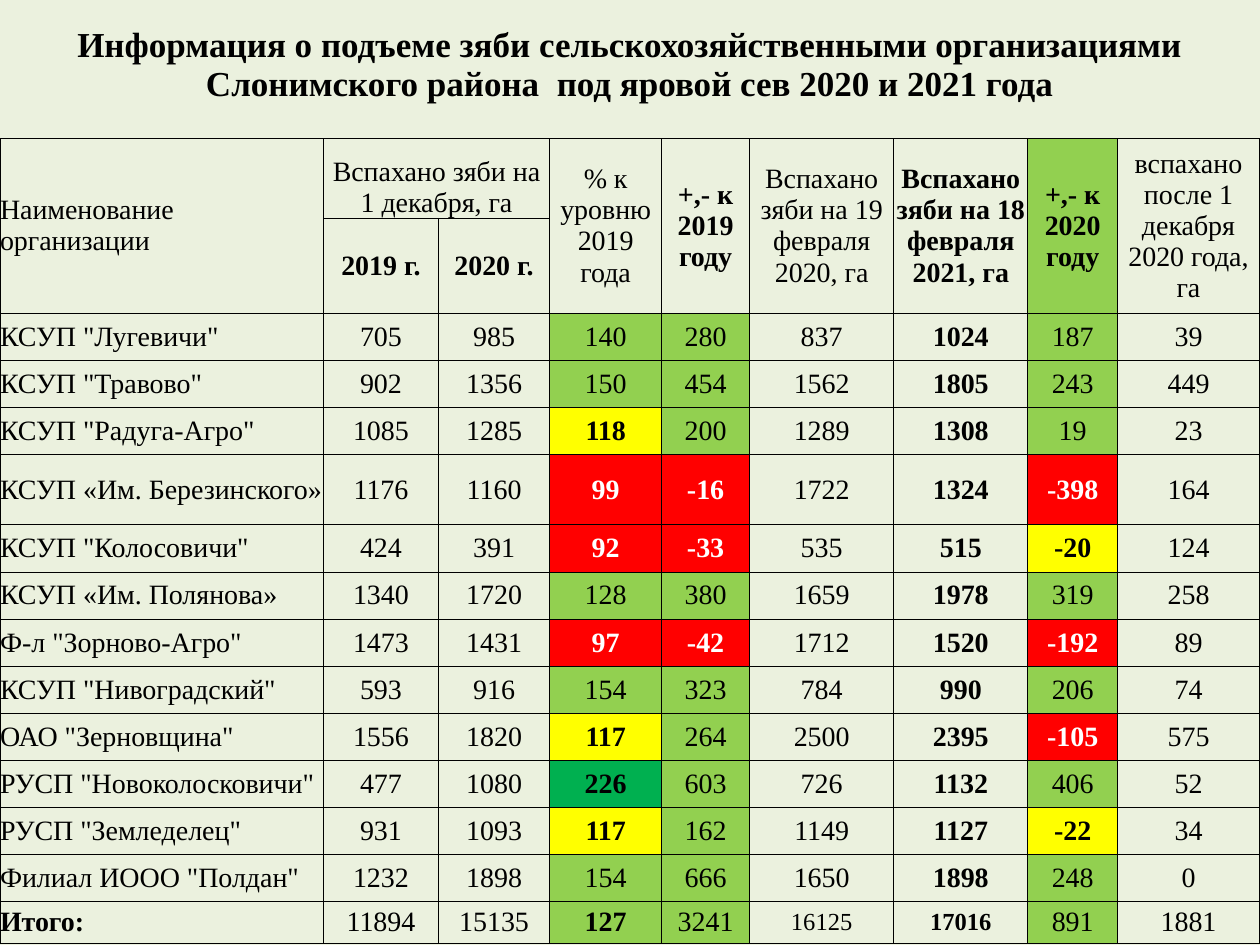
from lxml.etree import SubElement
from pptx import Presentation
from pptx.dml.color import RGBColor
from pptx.enum.text import MSO_ANCHOR as Anchor, PP_ALIGN as Align
from pptx.oxml.ns import qn
from pptx.util import Cm, Pt

PALE = RGBColor(0xEB, 0xF1, 0xDE)
GREEN = RGBColor(0x92, 0xD0, 0x50)
DARK_GREEN = RGBColor(0x00, 0xB0, 0x50)
YELLOW = RGBColor(0xFF, 0xFF, 0x00)
RED = RGBColor(0xFF, 0x00, 0x00)
BLACK = RGBColor(0, 0, 0)
WHITE = RGBColor(0xFF, 0xFF, 0xFF)
FONT = "Times New Roman"

TITLE = ("Информация о подъеме зяби сельскохозяйственными организациями "
         "Слонимского района  под яровой сев 2020 и 2021 года")
PERCENT, CHANGE_2019, FEB_2020, FEB_2021, CHANGE_2020 = 3, 4, 5, 6, 7
HEADERS = {
    0: "Наименование организации",
    1: "Вспахано зяби на 1 декабря, га",
    PERCENT: "% к уровню 2019 года",
    CHANGE_2019: "+,- к 2019 году",
    FEB_2020: "Вспахано зяби на 19 февраля 2020, га",
    FEB_2021: "Вспахано зяби на 18 февраля 2021, га",
    CHANGE_2020: "+,- к 2020 году",
    8: "вспахано после 1 декабря 2020 года, га",
}
BOLD_HEADERS = (CHANGE_2019, FEB_2021, CHANGE_2020)
YEARS = {1: "2019 г.", 2: "2020 г."}
FARMS = [
    ('КСУП "Лугевичи"', 705, 985, 140, 280, 837, 1024, 187, 39),
    ('КСУП "Травово"', 902, 1356, 150, 454, 1562, 1805, 243, 449),
    ('КСУП "Радуга-Агро"', 1085, 1285, 118, 200, 1289, 1308, 19, 23),
    ("КСУП «Им. Березинского»", 1176, 1160, 99, -16, 1722, 1324, -398, 164),
    ('КСУП "Колосовичи"', 424, 391, 92, -33, 535, 515, -20, 124),
    ("КСУП «Им. Полянова»", 1340, 1720, 128, 380, 1659, 1978, 319, 258),
    ('Ф-л "Зорново-Агро"', 1473, 1431, 97, -42, 1712, 1520, -192, 89),
    ('КСУП "Нивоградский"', 593, 916, 154, 323, 784, 990, 206, 74),
    ('ОАО "Зерновщина"', 1556, 1820, 117, 264, 2500, 2395, -105, 575),
    ('РУСП "Новоколосковичи"', 477, 1080, 226, 603, 726, 1132, 406, 52),
    ('РУСП "Земледелец"', 931, 1093, 117, 162, 1149, 1127, -22, 34),
    ('Филиал ИООО "Полдан"', 1232, 1898, 154, 666, 1650, 1898, 248, 0),
]
TOTAL = ("Итого:", 11894, 15135, 127, 3241, 16125, 17016, 891, 1881)

COLUMN_WIDTHS = [6.52, 2.32, 2.24, 2.26, 1.77, 2.91, 2.7, 1.81, 2.86]
FARM_HEIGHT, TALL_HEIGHT = 0.95, 1.41
TALL_FARM = 3
FIRST_FARM_ROW = 3
ROW_HEIGHTS = [2.79, 1.61, 1.92] + [FARM_HEIGHT] * len(FARMS) + [0.83]
ROW_HEIGHTS[FIRST_FARM_ROW + TALL_FARM] = TALL_HEIGHT


def rating(column, value):
    if column == PERCENT:
        steps = [(200, DARK_GREEN), (120, GREEN), (100, YELLOW)]
    elif column == CHANGE_2019:
        steps = [(0, GREEN)]
    elif column == CHANGE_2020:
        steps = [(0, GREEN), (-100, YELLOW)]
    else:
        return PALE
    return next((color for limit, color in steps if value >= limit), RED)


def draw_borders(cell, sides):
    properties = cell._tc.get_or_add_tcPr()
    for side in ("L", "R", "T", "B"):
        line = SubElement(properties, qn(f"a:ln{side}"), w=str(Pt(0.5)))
        if side in sides:
            fill = SubElement(line, qn("a:solidFill"))
            SubElement(fill, qn("a:srgbClr"), val=str(BLACK))
        else:
            SubElement(line, qn("a:noFill"))


def write(cell, text, size=16, bold=False, fill=PALE, align=Align.CENTER,
          anchor=Anchor.MIDDLE):
    cell.text = str(text)
    cell.vertical_anchor = anchor
    cell.fill.solid()
    cell.fill.fore_color.rgb = fill
    para = cell.text_frame.paragraphs[0]
    para.alignment = align
    para.font.name = FONT
    para.font.size = Pt(size)
    para.font.bold = bold
    para.font.color.rgb = WHITE if fill == RED else BLACK


def write_record(table, row, record, is_total=False):
    for column, value in enumerate(record):
        fill = rating(column, value)
        bold = (column == FEB_2021 or fill not in (PALE, GREEN)
                or is_total and column in (0, PERCENT))
        size = 14 if is_total and column in (FEB_2020, FEB_2021) else 16
        align = Align.LEFT if column == 0 else Align.CENTER
        write(table.cell(row, column), value, size, bold, fill, align)


def write_header(table):
    title = table.cell(0, 0)
    title.merge(table.cell(0, len(COLUMN_WIDTHS) - 1))
    write(title, TITLE, 20, True, anchor=Anchor.TOP)
    title.margin_top = Cm(0.53)
    for column, text in HEADERS.items():
        cell = table.cell(1, column)
        over_years = column == 1
        cell.merge(table.cell(1, 2) if over_years else table.cell(2, column))
        write(cell, text,
              bold=column in BOLD_HEADERS,
              fill=GREEN if column == CHANGE_2020 else PALE,
              align=Align.LEFT if column == 0 else Align.CENTER,
              anchor=Anchor.BOTTOM if over_years else Anchor.MIDDLE)
    for column, text in YEARS.items():
        write(table.cell(2, column), text, bold=True)


def main():
    deck = Presentation()
    deck.slide_width, deck.slide_height = Cm(25.4), Cm(19.05)
    page = deck.slides.add_slide(deck.slide_layouts[6])
    page.background.fill.solid()
    page.background.fill.fore_color.rgb = PALE

    table = page.shapes.add_table(
        len(ROW_HEIGHTS), len(COLUMN_WIDTHS), 0, 0,
        Cm(sum(COLUMN_WIDTHS)), Cm(sum(ROW_HEIGHTS))).table
    table.first_row = table.horz_banding = False
    for column, width in zip(table.columns, COLUMN_WIDTHS):
        column.width = Cm(width)
    for index, (row, height) in enumerate(zip(table.rows, ROW_HEIGHTS)):
        row.height = Cm(height)
        for cell in row.cells:
            cell.margin_left = cell.margin_right = 0
            cell.margin_top = cell.margin_bottom = 0
            draw_borders(cell, "B" if index == 0 else "LRTB")
            cell.fill.solid()
            cell.fill.fore_color.rgb = PALE

    write_header(table)
    for row, farm in enumerate(FARMS, FIRST_FARM_ROW):
        write_record(table, row, farm)
    write_record(table, len(ROW_HEIGHTS) - 1, TOTAL, is_total=True)
    deck.save("out.pptx")


if __name__ == "__main__":
    main()
